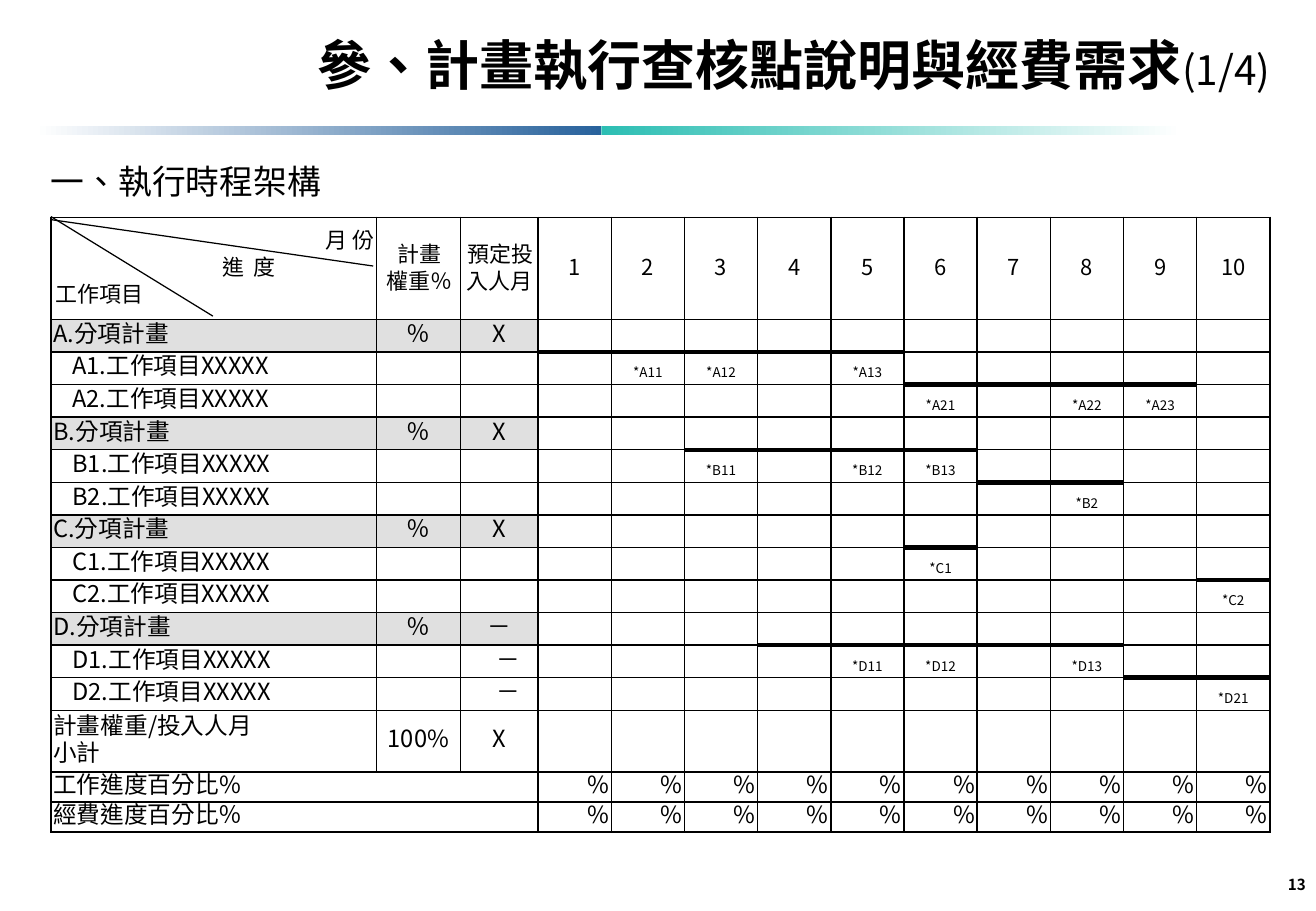
from lxml import etree
from pptx import Presentation
from pptx.dml.color import RGBColor
from pptx.enum.lang import MSO_LANGUAGE_ID
from pptx.enum.shapes import MSO_CONNECTOR, MSO_SHAPE
from pptx.enum.text import MSO_ANCHOR, PP_ALIGN
from pptx.oxml.ns import qn
from pptx.util import Pt

LEFT, CENTER, RIGHT, JUSTIFY = PP_ALIGN.LEFT, PP_ALIGN.CENTER, PP_ALIGN.RIGHT, PP_ALIGN.JUSTIFY
TOP, MIDDLE = MSO_ANCHOR.TOP, MSO_ANCHOR.MIDDLE
RECT, STRAIGHT = MSO_SHAPE.RECTANGLE, MSO_CONNECTOR.STRAIGHT
ZH_TW = MSO_LANGUAGE_ID.TRADITIONAL_CHINESE

FONT = "Noto Sans CJK SC"
COLORS = {"ink": "000000", "group": "E0E0E0", "white": "FFFFFF", "blue": "28629C", "teal": "2CBEB3"}
LEADING = 16
TASK_INDENT = 11.3
MONTHS = 10
FIRST_MONTH_COL = 3
COL_WIDTHS = [193, 49.7, 46.1] + [43.38] * MONTHS

TASKS = [
    ("A.分項計畫", "％", "X", None, {}),
    ("A1.工作項目XXXXX", "", "", (1, 5), {2: "*A11", 3: "*A12", 5: "*A13"}),
    ("A2.工作項目XXXXX", "", "", (6, 9), {6: "*A21", 8: "*A22", 9: "*A23"}),
    ("B.分項計畫", "％", "X", None, {}),
    ("B1.工作項目XXXXX", "", "", (3, 6), {3: "*B11", 5: "*B12", 6: "*B13"}),
    ("B2.工作項目XXXXX", "", "", (7, 8), {8: "*B2"}),
    ("C.分項計畫", "％", "X", None, {}),
    ("C1.工作項目XXXXX", "", "", (6, 6), {6: "*C1"}),
    ("C2.工作項目XXXXX", "", "", (10, 10), {10: "*C2"}),
    ("D.分項計畫", "％", "－", None, {}),
    ("D1.工作項目XXXXX", "", "－", (4, 8), {5: "*D11", 6: "*D12", 8: "*D13"}),
    ("D2.工作項目XXXXX", "", "－", (9, 10), {10: "*D21"}),
]
ROW_HEIGHTS = [60.5] + [19.31] * len(TASKS) + [36.7, 17.7, 17.7]


def rgb(name):
    """Return the palette colour of that name."""
    return RGBColor.from_string(COLORS[name])


def add_text(p, text, size=14, bold=False, align=LEFT, indent=0, leading=None):
    """Add a formatted run to a paragraph, or size the paragraph if it is empty."""
    p.alignment = align
    if leading:
        p.line_spacing = Pt(leading)
    if indent:
        p._p.get_or_add_pPr().set("indent", str(Pt(indent)))
    if not text:
        etree.SubElement(p._p, qn("a:endParaRPr")).set("sz", "800")
        return
    r = p.add_run()
    r.text = text
    r.font.size, r.font.bold, r.font.name = Pt(size), bold, FONT
    r.font.color.rgb = rgb("ink")
    r.font.language_id = ZH_TW
    etree.SubElement(r.font._element, qn("a:ea")).set("typeface", FONT)


def add_box(s, x, y, w, h, anchor=TOP, wrap=True):
    """Add an empty text box and return its first paragraph."""
    tf = s.shapes.add_textbox(Pt(x), Pt(y), Pt(w), Pt(h)).text_frame
    tf.word_wrap, tf.vertical_anchor = wrap, anchor
    return tf.paragraphs[0]


def add_divider(s, x, y, w, h):
    """Draw the two-part gradient band inside the box."""
    middle = x + 335.5
    bands = [(x, middle, "white", "blue"), (middle, x + w, "teal", "white")]
    for left, right, start, end in bands:
        sp = s.shapes.add_shape(RECT, Pt(left), Pt(y), Pt(right - left), Pt(h))
        sp.shadow.inherit = False
        sp.line.fill.background()
        sp.fill.gradient()
        sp.fill.gradient_angle = 0
        for stop, name in zip(sp.fill.gradient_stops, (start, end)):
            stop.color.rgb = rgb(name)


def set_borders(cell, top=1, bottom=1):
    """Give a cell solid borders, with its own top and bottom widths."""
    tc_pr = cell._tc.get_or_add_tcPr()
    for side, width in (("L", 1), ("R", 1), ("T", top), ("B", bottom)):
        ln = etree.SubElement(tc_pr, qn(f"a:ln{side}"), w=str(Pt(width)))
        fill = etree.SubElement(ln, qn("a:solidFill"))
        etree.SubElement(fill, qn("a:srgbClr"), val=COLORS["ink"])


def has_bar(row, month):
    """Tell whether a schedule bar runs along the top of this cell."""
    if not 1 <= row <= len(TASKS):
        return False
    bar = TASKS[row - 1][3]
    return bar is not None and bar[0] <= month <= bar[1]


def fill_cell(cell, text, **fmt):
    """Write one paragraph per line of text into a table cell."""
    tf = cell.text_frame
    for i, line in enumerate(text.split("\n")):
        p = tf.add_paragraph() if i else tf.paragraphs[0]
        add_text(p, line, leading=LEADING, **fmt)


def style_grid(table):
    """Set sizes, margins, borders and fills of the whole table."""
    table.first_row = table.horz_banding = False
    for col, width in zip(table.columns, COL_WIDTHS):
        col.width = Pt(width)
    for i, row in enumerate(table.rows):
        row.height = Pt(ROW_HEIGHTS[i])
        is_group = 1 <= i <= len(TASKS) and TASKS[i - 1][3] is None
        for j, cell in enumerate(row.cells):
            month = j - FIRST_MONTH_COL + 1
            cell.vertical_anchor = MIDDLE
            cell.margin_left = cell.margin_right = Pt(1.4)
            cell.margin_top = cell.margin_bottom = 0
            set_borders(cell, 3 if has_bar(i, month) else 1, 3 if has_bar(i + 1, month) else 1)
            if is_group and j < FIRST_MONTH_COL:
                cell.fill.solid()
                cell.fill.fore_color.rgb = rgb("group")
            else:
                cell.fill.background()


def fill_header(table):
    """Write the header row."""
    tf = table.cell(0, 0).text_frame
    corner = [("月 份", RIGHT, 1.4), ("進  度", CENTER, 41.8), ("工作項目", LEFT, 1.4)]
    for i, (text, align, indent) in enumerate(corner):
        p = tf.add_paragraph() if i else tf.paragraphs[0]
        add_text(p, text, size=13, align=align, indent=indent, leading=LEADING)
    for j, text in enumerate(["計畫\n權重％", "預定投入人月"], 1):
        fill_cell(table.cell(0, j), text, size=13, align=CENTER, indent=1.4)
    for month in range(1, MONTHS + 1):
        fill_cell(table.cell(0, FIRST_MONTH_COL + month - 1), str(month), size=13, align=CENTER)


def fill_tasks(table):
    """Write the task rows with their milestones."""
    for i, (label, weight, effort, bar, milestones) in enumerate(TASKS, 1):
        indent = TASK_INDENT if bar else 0
        fill_cell(table.cell(i, 0), label, align=JUSTIFY, indent=indent)
        fill_cell(table.cell(i, 1), weight, align=CENTER)
        fill_cell(table.cell(i, 2), effort, align=CENTER, indent=indent)
        for month in range(1, MONTHS + 1):
            cell = table.cell(i, FIRST_MONTH_COL + month - 1)
            fill_cell(cell, milestones.get(month, ""), size=8, align=CENTER)


def fill_totals(table):
    """Write the subtotal row and the two percentage rows."""
    subtotal = len(TASKS) + 1
    fill_cell(table.cell(subtotal, 0), "計畫權重/投入人月\n小計", align=JUSTIFY)
    for j, text in enumerate(["100%", "X"] + [""] * MONTHS, 1):
        fill_cell(table.cell(subtotal, j), text, align=CENTER)
    for i, label in enumerate(["工作進度百分比%", "經費進度百分比％"], subtotal + 1):
        table.cell(i, 0).merge(table.cell(i, FIRST_MONTH_COL - 1))
        fill_cell(table.cell(i, 0), label, align=JUSTIFY)
        for j in range(FIRST_MONTH_COL, FIRST_MONTH_COL + MONTHS):
            fill_cell(table.cell(i, j), "%", align=RIGHT)


def add_schedule(s, x, y, w, h):
    """Build the schedule table and the diagonals of its corner cell."""
    table = s.shapes.add_table(
        len(ROW_HEIGHTS), len(COL_WIDTHS), Pt(x), Pt(y), Pt(w), Pt(h)).table
    style_grid(table)
    fill_header(table)
    fill_tasks(table)
    fill_totals(table)
    for x1, y1, x2, y2 in [(0, -0.5, 96, 58.5), (0.7, 1.4, 191, 28.8)]:
        line = s.shapes.add_connector(STRAIGHT, Pt(x + x1), Pt(y + y1), Pt(x + x2), Pt(y + y2))
        line.line.color.rgb = rgb("ink")
        line.line.width = Pt(0.75)
        etree.SubElement(line._element.spPr, qn("a:effectLst"))


def build_slide(prs):
    """Lay out the schedule slide."""
    s = prs.slides.add_slide(prs.slide_layouts[6])
    add_divider(s, 20.9, 74.5, 679.7, 5.5)
    add_text(add_box(s, 605.4, 509.8, 175.7, 28.8, anchor=MIDDLE), "13", size=9, bold=True, align=RIGHT)
    add_text(add_box(s, 23, 91.8, 176.4, 31.7, wrap=False), "一、執行時程架構", size=20)
    title = add_box(s, 144, 15.1, 653, 65.5)
    add_text(title, "參、計畫執行查核點說明與經費需求", size=32, bold=True, align=CENTER)
    add_text(title, "(1/4)", size=24, align=CENTER)
    add_schedule(s, 30.2, 128.9, sum(COL_WIDTHS), sum(ROW_HEIGHTS))


def main():
    """Create the presentation and save it."""
    prs = Presentation()
    prs.slide_width, prs.slide_height = Pt(780), Pt(540)
    build_slide(prs)
    prs.save("out.pptx")


if __name__ == "__main__":
    main()
